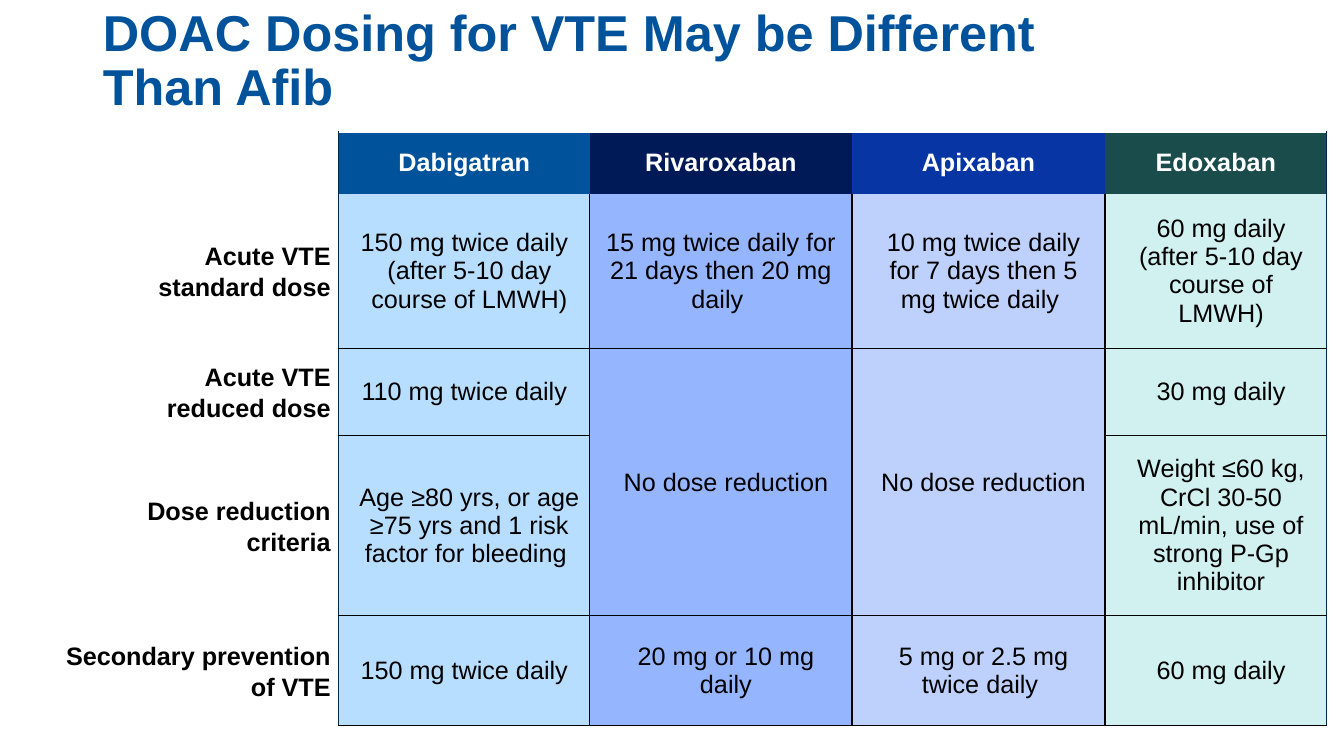
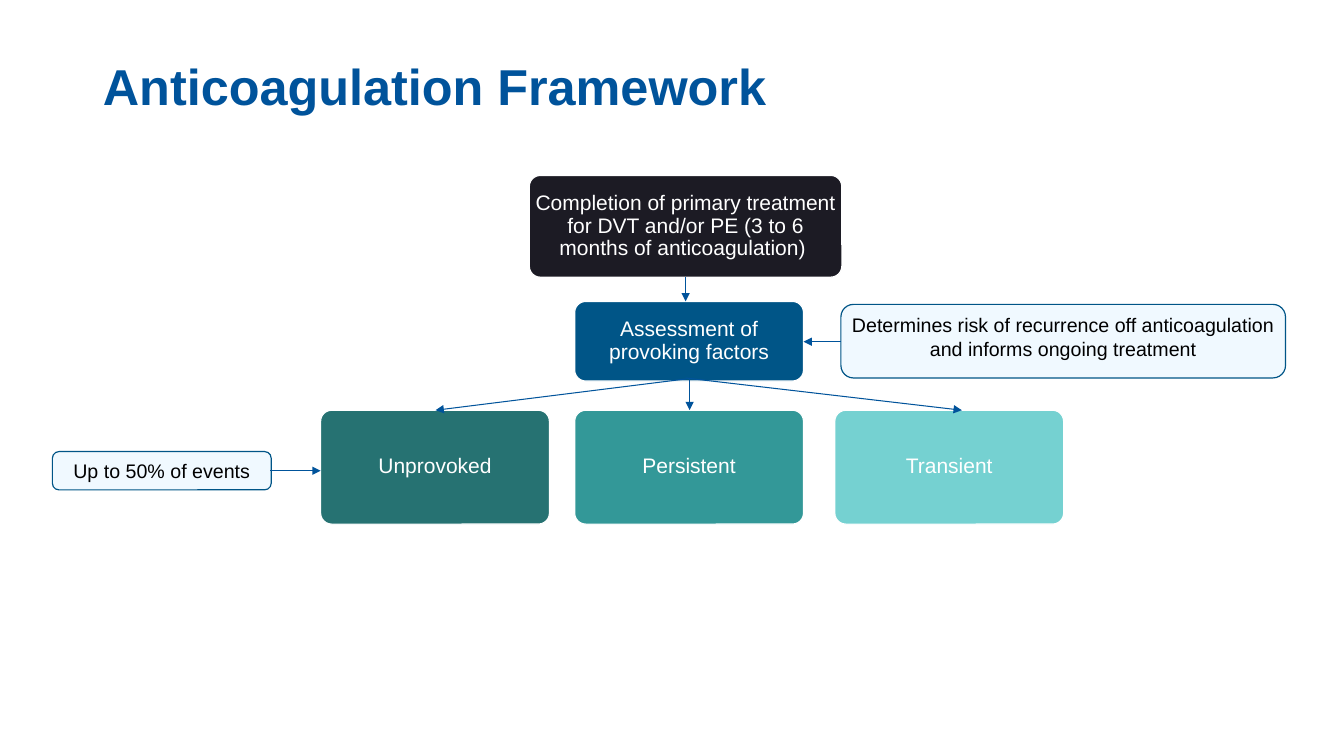
import copy

import pptx
import pptx.dml.color
import pptx.enum.shapes
import pptx.enum.text
import pptx.oxml
import pptx.oxml.ns
import pptx.util

PX = 9144
FONT = "Arial"
ALIGN = pptx.enum.text.PP_ALIGN
ANCHOR = pptx.enum.text.MSO_ANCHOR
COLORS = {
    "blue": "00539B", "navy": "00294E", "black": "000000", "white": "FFFFFF",
    "callout": "B4E3FF", "ocean": "005587", "ink": "1C1B24",
    "unprovoked": "267272", "persistent": "339898", "transient": "75D1D1",
}
DRUG_HEADS = ["00539B", "001A57", "0736A4", "1A4C4C"]
DRUG_BODIES = ["B8DEFF", "95B5FF", "BED1FC", "D1F0F0"]
COLUMN_WIDTHS = [289, 249, 260, 251, 220]
ROW_HEIGHTS = [61, 154, 86, 179, 109]
DOSING = [
    ["", "Dabigatran", "Rivaroxaban", "Apixaban", "Edoxaban"],
    ["Acute VTE\vstandard dose",
     "150 mg twice daily (after 5-10 day course of LMWH)",
     "15 mg twice daily for 21 days then 20 mg daily ",
     "10 mg twice daily for 7 days then 5 mg twice daily ",
     "60 mg daily (after 5-10 day course of LMWH)"],
    ["Acute VTE\vreduced dose", "110 mg twice daily", "No dose reduction",
     "No dose reduction", "30 mg daily"],
    ["Dose reduction criteria",
     "Age ≥80 yrs, or age ≥75 yrs and 1 risk factor for bleeding ", "", "",
     "Weight ≤60 kg, CrCl 30-50 mL/min, use of strong P-Gp inhibitor"],
    ["Secondary prevention of VTE", "150 mg twice daily", "20 mg or 10 mg daily",
     "5 mg or 2.5 mg twice daily ", "60 mg daily"],
]
TIGHT_ROWS = {0, 2, 3}
UNINDENTED = {(1, 2), (2, 1), (4, 1)}
HANGING = {(1, 1)}
STEPS = [
    ("Completion of primary treatment for DVT and/or PE (3 to 6 months of anticoagulation) ",
     (525, 174, 310, 101), "ink"),
    ("Assessment of provoking factors", (570, 299, 227, 79), "ocean"),
    ("Unprovoked", (318, 407, 227, 113), "unprovoked"),
    ("Persistent", (570, 407, 227, 113), "persistent"),
    ("Transient", (828, 407, 227, 113), "transient"),
]
CALLOUTS = [
    ("Determines risk of recurrence off anticoagulation and informs ongoing treatment",
     (834, 302, 441, 73)),
    ("Up to 50% of events", (52, 448, 217, 38)),
]
ARROWS = [
    (268, 467, 318, 467), (680, 275, 680, 299), (684, 375, 684, 407),
    (680, 376, 432, 407), (680, 375, 954, 407), (834, 339, 797, 339),
]


def emu(*lengths):
    """Turn px lengths into EMU."""
    return [pptx.util.Emu(length * PX) for length in lengths]


def rgb(value):
    """Make a colour from a hex string."""
    return pptx.dml.color.RGBColor.from_string(value)


def set_insets(target, left, top, right, bottom):
    """Set the inner margins of a cell or text frame."""
    (target.margin_left, target.margin_top,
     target.margin_right, target.margin_bottom) = emu(left, top, right, bottom)


def write(frame, text, size, color, bold=False, align=ALIGN.CENTER, spacing=None):
    """Fill a text frame with one formatted paragraph and return it."""
    frame.text = text
    paragraph = frame.paragraphs[0]
    paragraph.alignment = align
    if spacing:
        paragraph.line_spacing = spacing
    for run in paragraph.runs:
        run.font.name = FONT
        run.font.size = pptx.util.Pt(size)
        run.font.bold = bold
        run.font.color.rgb = rgb(COLORS[color])
    for line_break in paragraph._p.findall(pptx.oxml.ns.qn("a:br")):
        line_break.append(copy.deepcopy(paragraph.runs[0]._r.rPr))
    return paragraph


def add_titled_slide(deck, title):
    """Add a slide with the shared title style."""
    slide = deck.slides.add_slide(deck.slide_layouts[5])
    heading = slide.shapes.title
    heading.left, heading.top, heading.width, heading.height = emu(92, 0, 1150, 121)
    frame = heading.text_frame
    frame.word_wrap = True
    frame.auto_size = pptx.enum.text.MSO_AUTO_SIZE.NONE
    frame.vertical_anchor = ANCHOR.BOTTOM
    write(frame, title, 36, "blue", True, ALIGN.LEFT, 0.9)
    return slide


def set_border(cell, side, color):
    """Draw one cell edge, or hide it when no colour is given."""
    fill = "<a:noFill/>"
    if color:
        fill = f'<a:solidFill><a:srgbClr val="{COLORS[color]}"/></a:solidFill>'
    cell._tc.get_or_add_tcPr().append(pptx.oxml.parse_xml(
        f'<a:ln{side} {pptx.oxml.ns.nsdecls("a")} w="12700">{fill}</a:ln{side}>'))


def set_borders(cell, row, column):
    """Draw the edges that a cell's place in the dosing table calls for."""
    rule = "black" if row else None
    edges = {"L": rule, "R": rule, "T": rule, "B": rule}
    if column == 0:
        edges = {"L": None, "R": "navy", "T": None, "B": None}
    if column == 1:
        edges["L"] = "navy"
    if column == len(COLUMN_WIDTHS) - 1:
        edges["R"] = "navy"
    if column and row < 2:
        edges["T"] = None if row else "white"
    if cell.is_spanned:
        edges["T"] = None
    for side, color in edges.items():
        set_border(cell, side, color)


def fill_label_cell(cell, text):
    """Format a row label."""
    cell.fill.background()
    set_insets(cell, 0, 0, 8, 0)
    paragraph = write(cell.text_frame, text, 18, "black", True, ALIGN.RIGHT, 1.1)
    paragraph._p.get_or_add_pPr().set("marL", str(10 * PX))


def fill_drug_cell(cell, text, row, column):
    """Format a drug heading or dose."""
    cell.fill.solid()
    cell.fill.fore_color.rgb = rgb((DRUG_BODIES if row else DRUG_HEADS)[column - 1])
    if row in TIGHT_ROWS:
        side = 7 if column == 4 else 0
        set_insets(cell, side, 0, side, 0)
    else:
        set_insets(cell, 10, 5, 10, 5)
    paragraph = write(cell.text_frame, text, 18, "black" if row else "white", not row)
    properties = paragraph._p.get_or_add_pPr()
    if row and (row, column) not in UNINDENTED:
        properties.set("marL", str(10 * PX))
    if (row, column) in HANGING:
        properties.set("indent", str(-10 * PX))


def add_dosing_table(slide):
    """Add the table of doses by drug and indication."""
    frame = slide.shapes.add_table(
        len(ROW_HEIGHTS), len(COLUMN_WIDTHS),
        *emu(47, 131, sum(COLUMN_WIDTHS), sum(ROW_HEIGHTS)))
    table = frame.table
    table.first_row = table.horz_banding = False
    for column, width in zip(table.columns, emu(*COLUMN_WIDTHS)):
        column.width = width
    for row, height in zip(table.rows, emu(*ROW_HEIGHTS)):
        row.height = height
    for column in (2, 3):
        table.cell(2, column).merge(table.cell(3, column))
    for row, texts in enumerate(DOSING):
        for column, text in enumerate(texts):
            cell = table.cell(row, column)
            cell.vertical_anchor = ANCHOR.MIDDLE
            set_borders(cell, row, column)
            if column:
                fill_drug_cell(cell, text, row, column)
            else:
                fill_label_cell(cell, text)


def add_rounded_box(slide, place, radius, fill, line):
    """Add a rounded rectangle without a shadow."""
    box = slide.shapes.add_shape(
        pptx.enum.shapes.MSO_SHAPE.ROUNDED_RECTANGLE, *emu(*place))
    box.shadow.inherit = False
    box.adjustments[0] = radius
    box.fill.solid()
    box.fill.fore_color.rgb = rgb(COLORS[fill])
    box.line.color.rgb = rgb(COLORS[line])
    box.line.width = pptx.util.Pt(0.85)
    box.text_frame.word_wrap = True
    return box


def add_step(slide, text, place, fill):
    """Add a step of the framework."""
    box = add_rounded_box(slide, place, 11 / place[3], fill, "white")
    set_insets(box.text_frame, 1, 4, 1, 4)
    box.text_frame.vertical_anchor = ANCHOR.MIDDLE
    write(box.text_frame, text, 15, "white", spacing=0.9)


def add_callout(slide, text, place):
    """Add a pale translucent remark."""
    box = add_rounded_box(slide, place, 0.17, "callout", "ocean")
    tint = box.fill._xPr.find(".//" + pptx.oxml.ns.qn("a:srgbClr"))
    tint.append(pptx.oxml.parse_xml(
        f'<a:alpha {pptx.oxml.ns.nsdecls("a")} val="20000"/>'))
    set_insets(box.text_frame, 2, 5, 2, 0)
    box.text_frame.vertical_anchor = ANCHOR.TOP
    write(box.text_frame, text, 14, "black")


def add_arrow(slide, ends):
    """Add a thin arrow pointing at its second end."""
    arrow = slide.shapes.add_connector(
        pptx.enum.shapes.MSO_CONNECTOR.STRAIGHT, *emu(*ends))
    arrow.line.color.rgb = rgb(COLORS["blue"])
    arrow.line.width = pptx.util.Pt(0.75)
    namespace = pptx.oxml.ns.nsdecls("a")
    arrow.line._get_or_add_ln().append(
        pptx.oxml.parse_xml(f'<a:tailEnd {namespace} type="triangle"/>'))
    arrow._element.spPr.append(pptx.oxml.parse_xml(f"<a:effectLst {namespace}/>"))


def main():
    """Build the dosing table and the framework."""
    deck = pptx.Presentation()
    deck.slide_width, deck.slide_height = emu(1333, 750)

    dosing = add_titled_slide(deck, "DOAC Dosing for VTE May be Different \vThan Afib")
    add_dosing_table(dosing)

    framework = add_titled_slide(deck, "Anticoagulation Framework")
    for text, place in CALLOUTS:
        add_callout(framework, text, place)
    for text, place, fill in STEPS:
        add_step(framework, text, place, fill)
    for ends in ARROWS:
        add_arrow(framework, ends)

    deck.save("out.pptx")


if __name__ == "__main__":
    main()
